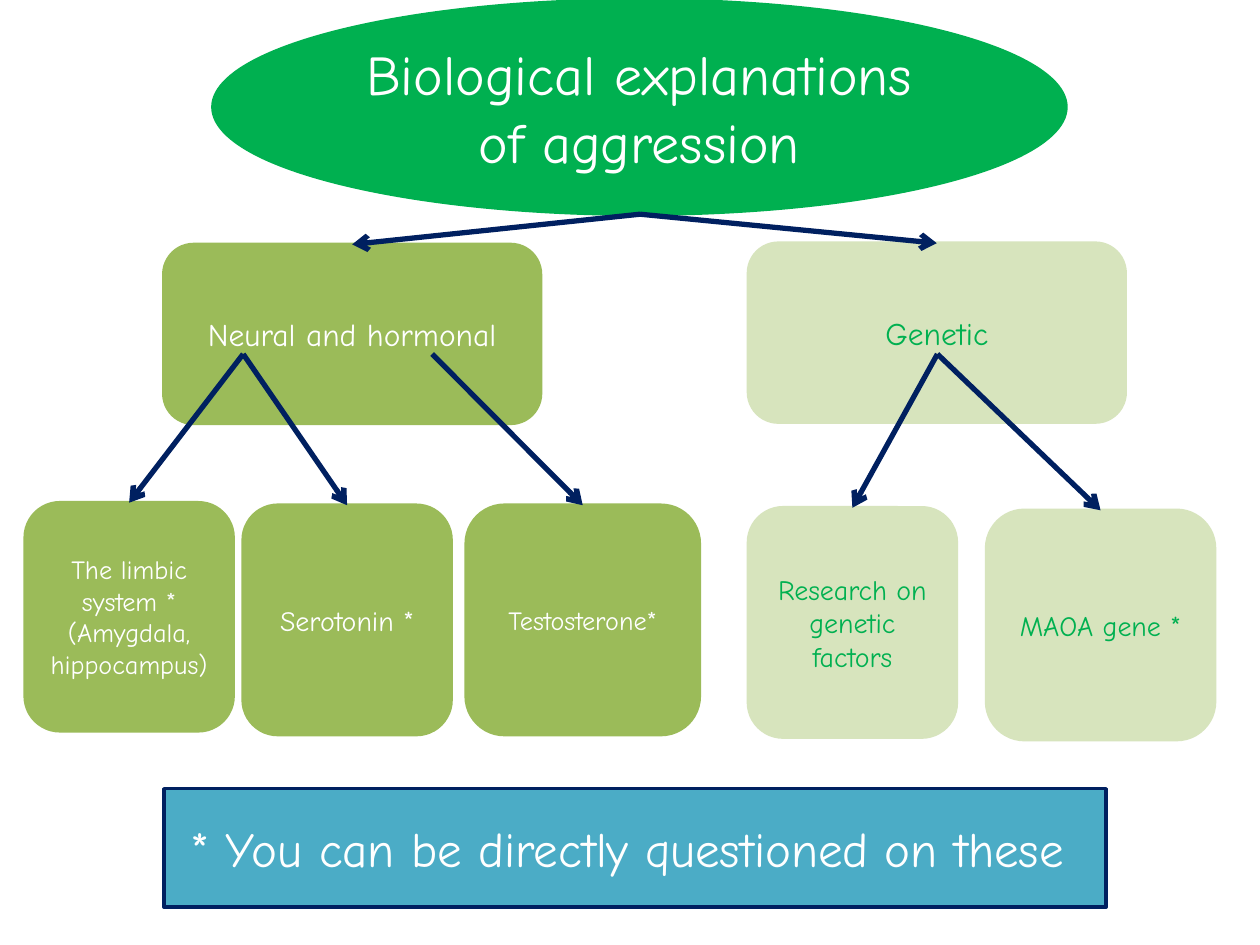
from lxml import etree
from pptx import Presentation
from pptx.dml.color import RGBColor
from pptx.enum import shapes, text
from pptx.oxml import ns
from pptx.util import Inches, Pt

COLORS = {
    "title": "00B050",
    "neural": "9BBB59",
    "genetic": "D7E4BD",
    "note": "4BACC6",
    "navy": "002060",
    "white": "FFFFFF",
}
FONT = "Comic Neue"
SHAPE = shapes.MSO_SHAPE


def add_box(kind, place, fill, outline, ink, size, lines):
    """Add a filled shape with centred text, one paragraph per line."""
    box = page.shapes.add_shape(kind, *[Inches(value) for value in place])
    box.shadow.inherit = False
    box.fill.solid()
    box.fill.fore_color.rgb = RGBColor.from_string(COLORS[fill])
    box.line.color.rgb = RGBColor.from_string(COLORS[outline])
    box.line.width = Pt(2)
    frame = box.text_frame
    frame.word_wrap = True
    frame.vertical_anchor = text.MSO_ANCHOR.MIDDLE
    for index, line in enumerate(lines):
        para = frame.add_paragraph() if index else frame.paragraphs[0]
        para.alignment = text.PP_ALIGN.CENTER
        span = para.add_run()
        span.text = line
        span.font.name = FONT
        span.font.size = Pt(size)
        span.font.color.rgb = RGBColor.from_string(COLORS[ink])
    return box


def add_arrow(start, target):
    """Draw an arrow from a point to the top of the target box."""
    x, y = [Inches(value) for value in start]
    arrow = page.shapes.add_connector(shapes.MSO_CONNECTOR.STRAIGHT, x, y, x, y)
    arrow.end_connect(target, 0)
    arrow.line.color.rgb = RGBColor.from_string(COLORS["navy"])
    arrow.line.width = Pt(3)
    outline = arrow.line._get_or_add_ln()
    etree.SubElement(outline, ns.qn("a:tailEnd"), type="arrow")
    etree.SubElement(arrow._element.spPr, ns.qn("a:effectLst"))


deck = Presentation()
deck.slide_width = Inches(10)
deck.slide_height = Inches(7.5)
page = deck.slides.add_slide(deck.slide_layouts[6])

add_box(SHAPE.OVAL, (1.69, 0, 6.77, 1.7), "title", "title", "white", 32,
        ["Biological explanations of aggression"])

# Name: place, branch colour, text colour, text size, lines
topics = {
    "neural": ((1.3, 1.94, 2.99, 1.42), "neural", "white", 18, ["Neural and hormonal"]),
    "genetic": ((5.94, 1.93, 2.99, 1.42), "genetic", "title", 18, ["Genetic"]),
    "limbic": ((0.2, 3.99, 1.65, 1.81), "neural", "white", 15,
               ["The limbic system *", "(Amygdala, hippocampus)"]),
    "testosterone": ((3.7, 4.01, 1.85, 1.82), "neural", "white", 15, ["Testosterone*"]),
    "serotonin": ((1.93, 4.01, 1.65, 1.82), "neural", "white", 16, ["Serotonin *"]),
    "research": ((5.94, 4.03, 1.65, 1.82), "genetic", "title", 16,
                 ["Research on genetic factors"]),
    "maoa": ((7.83, 4.05, 1.81, 1.82), "genetic", "title", 16, ["MAOA gene *"]),
}
boxes = {}
for name, (place, branch, ink, size, lines) in topics.items():
    boxes[name] = add_box(SHAPE.ROUNDED_RECTANGLE, place, branch, branch, ink, size, lines)

add_box(SHAPE.RECTANGLE, (1.3, 6.26, 7.48, 0.94), "note", "navy", "white", 28,
        ["* You can be directly questioned on these "])

arrows = [
    ((5.08, 1.7), ["neural", "genetic"]),
    ((1.93, 2.81), ["limbic", "serotonin"]),
    ((3.43, 2.81), ["testosterone"]),
    ((7.44, 2.81), ["research", "maoa"]),
]
for start, targets in arrows:
    for target in targets:
        add_arrow(start, boxes[target])

deck.save("out.pptx")
